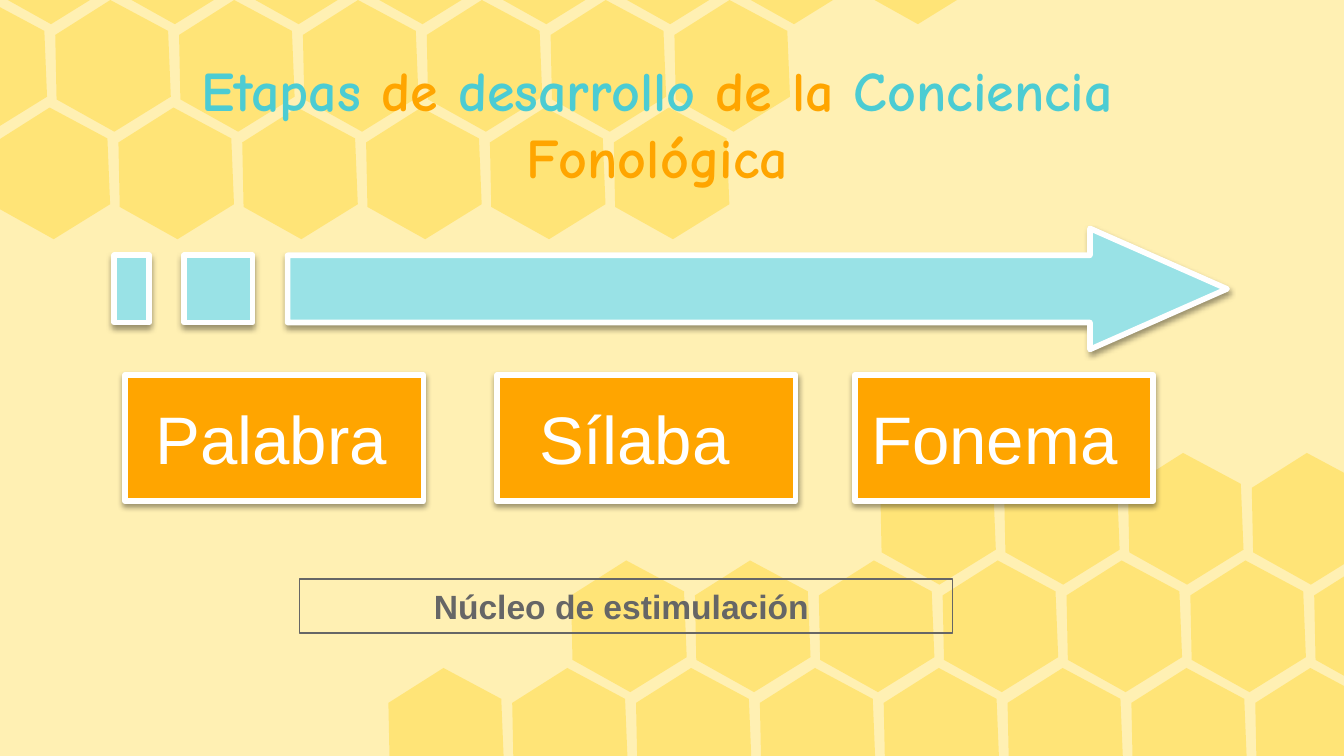
from lxml import etree
from pptx import Presentation
from pptx.dml.color import RGBColor
from pptx.enum import shapes, text
from pptx.oxml.ns import qn
from pptx.util import Inches, Pt

CREAM = RGBColor(0xFF, 0xF0, 0xB3)
HONEY = RGBColor(0xFF, 0xDB, 0x45)
ORANGE = RGBColor(0xFF, 0xA5, 0x00)
TURQUOISE = RGBColor(0x4C, 0xCC, 0xD3)
PALE_TURQUOISE = RGBColor(0x99, 0xE2, 0xE6)
WHITE = RGBColor(0xFF, 0xFF, 0xFF)
BLACK = RGBColor(0x00, 0x00, 0x00)
GREY = RGBColor(0x66, 0x66, 0x66)

HEXAGON = [(0.41, 0), (0, 0.26), (0.01, 0.74), (0.44, 0.98), (0.86, 0.72), (0.84, 0.23)]
HEXAGON_PITCH = 6.45 / 7
# Left and top of the first cell of each row, and the number of cells
HONEYCOMB_ROWS = [
    (-0.06, -0.8, 8), (-0.51, 0, 7), (-0.04, 0.8, 6),
    (6.55, 3.37, 4), (4.25, 4.17, 7), (2.89, 4.97, 8),
]
# Label, left edge and extra right inset of each stage
STAGES = [("Palabra", 0.93, 0.04), ("Sílaba", 3.7, 0.18), ("Fonema", 6.36, 0.14)]
TITLE_RUNS = [
    ("Etapas", TURQUOISE), (" de ", ORANGE), ("desarrollo", TURQUOISE),
    (" de la ", ORANGE), ("Conciencia", TURQUOISE), (" Fonológica", ORANGE),
]


def add_outline(slide, left, top, contours):
    """Build one freeform from closed contours given relative to left and top."""
    contours = [[(Inches(left + x), Inches(top + y)) for x, y in contour]
                for contour in contours]
    builder = slide.shapes.build_freeform(*contours[0][0])
    for number, contour in enumerate(contours):
        if number:
            builder.move_to(*contour[0])
        builder.add_line_segments(contour[1:], close=True)
    return builder.convert_to_shape()


def paint(shape, fill):
    shape.fill.solid()
    shape.fill.fore_color.rgb = fill
    shape.shadow.inherit = False


def paint_raised(shape, fill):
    """Fill the shape and give it a thick white border and a soft shadow."""
    paint(shape, fill)
    shape.line.color.rgb = WHITE
    shape.line.width = Pt(3)
    effects = shape.element.spPr.find(qn("a:effectLst"))
    shadow = etree.SubElement(
        effects, qn("a:outerShdw"), blurRad=str(Pt(3.1)), dist=str(Pt(1.6)),
        dir="5400000", rotWithShape="0")
    color = etree.SubElement(shadow, qn("a:srgbClr"), val=str(BLACK))
    etree.SubElement(color, qn("a:alpha"), val="38000")


def write_centred(shape, words, size, color, bold, extra_right):
    frame = shape.text_frame
    frame.word_wrap = True
    frame.margin_right = Inches(0.1 + extra_right)
    frame.text = words
    paragraph = frame.paragraphs[0]
    paragraph.alignment = text.PP_ALIGN.CENTER
    font = paragraph.runs[0].font
    font.name, font.size, font.bold = "Arial", Pt(size), bold
    font.color.rgb = color


def add_honeycomb_row(slide, left, top, count):
    for column in range(count):
        cell = add_outline(slide, left + column * HEXAGON_PITCH, top, [HEXAGON])
        paint(cell, HONEY)
        cell.line.fill.background()
        color = cell.element.spPr.find(qn("a:solidFill"))[0]
        etree.SubElement(color, qn("a:alpha"), val="54000")


def place_title(slide, left, top, width, height):
    title = slide.shapes.title
    title.left, title.top = Inches(left), Inches(top)
    title.width, title.height = Inches(width), Inches(height)
    title.element.getparent().append(title.element)  # in front of the honeycomb
    frame = title.text_frame
    frame.word_wrap = True
    frame.auto_size = text.MSO_AUTO_SIZE.NONE
    frame.vertical_anchor = text.MSO_ANCHOR.TOP
    frame.margin_left = frame.margin_right = frame.margin_bottom = 0
    frame.margin_top = Inches(0.04)
    paragraph = frame.paragraphs[0]
    paragraph.alignment = text.PP_ALIGN.CENTER
    for words, color in TITLE_RUNS:
        run = paragraph.add_run()
        run.text = words
        run.font.name, run.font.size, run.font.bold = "Comic Neue", Pt(30), True
        run.font.color.rgb = color


def add_striped_arrow(slide, left, top, width, height):
    """Draw two stripes followed by a long arrow pointing right."""
    upper, lower = 0.2, height - 0.2
    neck = width - 1.02
    arrow = [(neck, 0), (neck, upper), (1.29, upper), (1.29, lower),
             (neck, lower), (neck, height), (width, height / 2)]
    stripes = [[(start, upper), (start, lower), (end, lower), (end, upper)]
               for start, end in [(0.52, 1.03), (0, 0.26)]]
    paint_raised(add_outline(slide, left, top, [arrow] + stripes), PALE_TURQUOISE)


def add_rectangle(slide, left, top, width, height):
    return slide.shapes.add_shape(
        shapes.MSO_SHAPE.RECTANGLE,
        Inches(left), Inches(top), Inches(width), Inches(height))


def add_stages(slide, top, width, height):
    for label, left, extra_right in STAGES:
        box = add_rectangle(slide, left, top, width, height)
        paint_raised(box, ORANGE)
        box.text_frame.vertical_anchor = text.MSO_ANCHOR.MIDDLE
        write_centred(box, label, 36, WHITE, False, extra_right)


def add_core_label(slide, left, top, width, height):
    box = add_rectangle(slide, left, top, width, height)
    box.fill.background()
    box.line.color.rgb = GREY
    box.line.width = Pt(0.75)
    box.shadow.inherit = False
    box.text_frame.vertical_anchor = text.MSO_ANCHOR.TOP
    box.text_frame.auto_size = text.MSO_AUTO_SIZE.SHAPE_TO_FIT_TEXT
    write_centred(box, "Núcleo de estimulación", 18, GREY, True, 0.07)


def main():
    presentation = Presentation()
    presentation.slide_width = Inches(10)
    presentation.slide_height = presentation.slide_width * 9 // 16
    slide = presentation.slides.add_slide(presentation.slide_layouts[5])
    slide.background.fill.solid()
    slide.background.fill.fore_color.rgb = CREAM
    for left, top, count in HONEYCOMB_ROWS:
        add_honeycomb_row(slide, left, top, count)
    place_title(slide, 1.2, 0.37, 7.38, 1.04)
    add_striped_arrow(slide, 0.85, 1.7, 8.28, 0.9)
    add_stages(slide, 2.79, 2.22, 0.94)
    add_core_label(slide, 2.23, 4.31, 4.86, 0.4)
    presentation.save("out.pptx")


if __name__ == "__main__":
    main()
